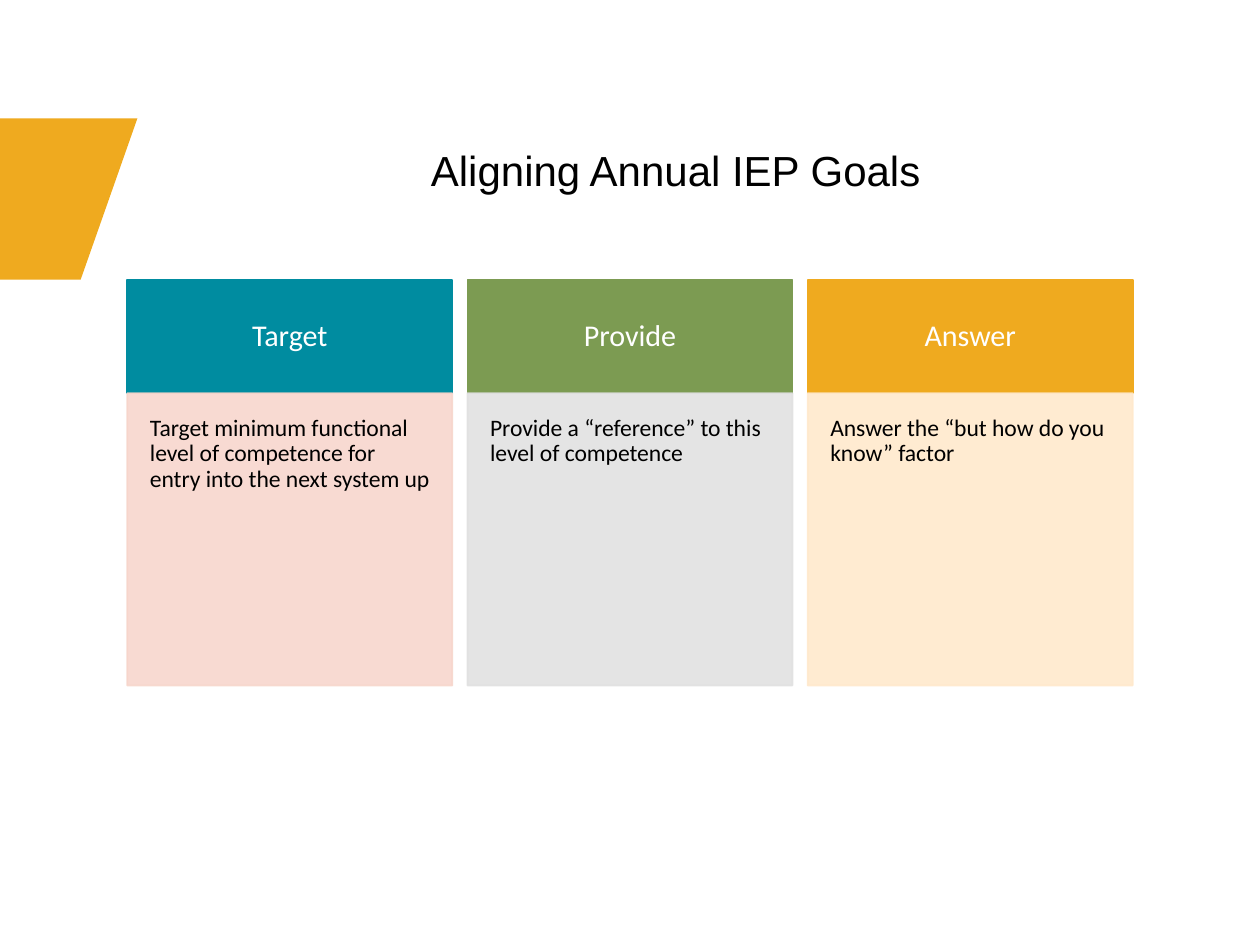
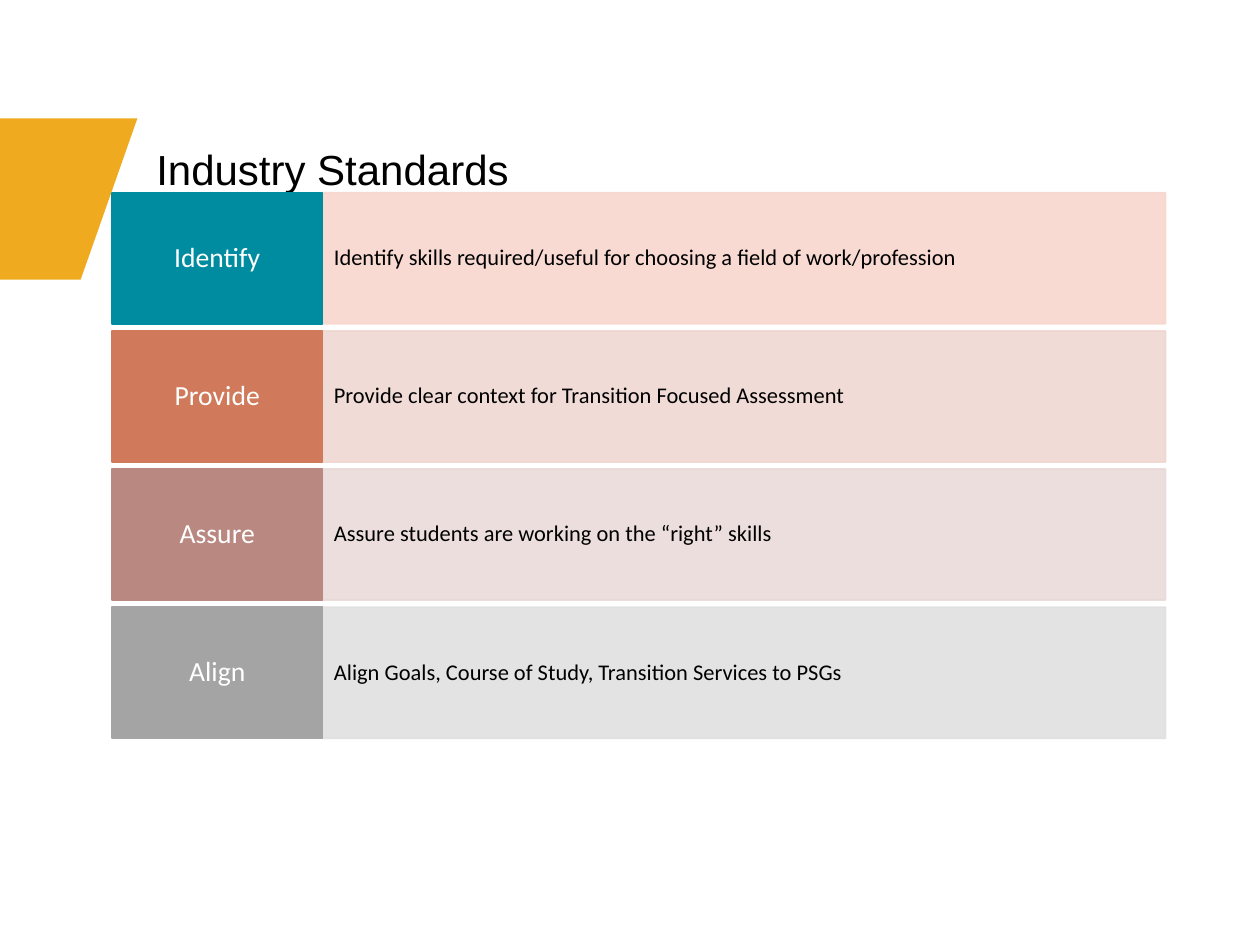
from lxml import etree
from pptx import Presentation
from pptx import util as u
from pptx.dml.color import RGBColor
from pptx.enum import text
from pptx.oxml.ns import qn

SLIDE_WIDTH, SLIDE_HEIGHT = 10, 7.5
TITLE_ONLY = 5
OPACITY = 86
COLOURS = {
    "ink": "000000", "white": "FFFFFF", "gold": "EFAA1F", "teal": "008CA0",
    "green": "7C9B52", "clay": "D07A5B", "rose": "B88881", "grey": "A4A4A4",
    "pale coral": "F7D5CB", "pale silver": "E0E0E0", "pale gold": "FFE8CA",
    "pale clay": "EFD6D1", "pale rose": "E8D9D7", "pale grey": "DFDFDF",
}
LEFT, CENTRE = text.PP_ALIGN.LEFT, text.PP_ALIGN.CENTER
TOP, MIDDLE = text.MSO_ANCHOR.TOP, text.MSO_ANCHOR.MIDDLE

TITLE = {"font": "Arial", "size": 24, "colour": "ink", "align": LEFT,
         "anchor": TOP, "spacing": 0.85, "insets": (0.07, 0.04)}
LABEL = {"font": "Calibri", "colour": "white", "align": CENTRE,
         "anchor": MIDDLE, "spacing": 0.9}
DETAIL = {"font": "Calibri", "colour": "ink", "align": LEFT, "spacing": 0.9}
COLUMN_HEAD = {**LABEL, "size": 17.2, "insets": (0.15, 0.15)}
COLUMN_BODY = {**DETAIL, "size": 13.5, "anchor": TOP, "insets": (0.18, 0.18)}
ROW_HEAD = {**LABEL, "size": 15.8, "insets": (0.06, 0.08)}
ROW_BODY = {**DETAIL, "size": 12.8, "anchor": MIDDLE, "insets": (0.09, 0.2)}

GOALS = [
    ("Target", "teal", "pale coral",
     "Target minimum functional level of competence for entry into the next system up"),
    ("Provide", "green", "pale silver",
     "Provide a “reference” to this level of competence"),
    ("Answer", "gold", "pale gold", "Answer the “but how do you know” factor"),
]
STANDARDS = [
    ("Identify", "teal", "pale coral",
     "Identify skills required/useful for choosing a field of work/profession"),
    ("Provide", "clay", "pale clay",
     "Provide clear context for Transition Focused Assessment"),
    ("Assure", "rose", "pale rose",
     "Assure students are working on the “right” skills"),
    ("Align", "grey", "pale grey",
     "Align Goals, Course of Study, Transition Services to PSGs"),
]


def rgb(name):
    """Return the named colour."""
    return RGBColor.from_string(COLOURS[name])


def track_starts(start, extent, size, count):
    """Return the starts of equal tracks spread evenly over an extent."""
    pitch = (extent - size) / (count - 1)
    return [start + index * pitch for index in range(count)]


def write(shape, wording, style):
    """Put one formatted paragraph into a shape."""
    frame = shape.text_frame
    frame.text = wording
    across, down = (u.Inches(inset) for inset in style["insets"])
    paragraph = frame.paragraphs[0]
    formats = {
        frame: {"word_wrap": True, "auto_size": text.MSO_AUTO_SIZE.NONE,
                "vertical_anchor": style["anchor"],
                "margin_left": across, "margin_right": across,
                "margin_top": down, "margin_bottom": down},
        paragraph: {"alignment": style["align"], "line_spacing": style["spacing"]},
        paragraph.runs[0].font: {"name": style["font"], "size": u.Pt(style["size"])},
    }
    for target, values in formats.items():
        for attribute, value in values.items():
            setattr(target, attribute, value)
    paragraph.runs[0].font.color.rgb = rgb(style["colour"])


def add_panel(slide, box, colour, wording, style, opacity=100):
    """Add a filled rectangle with its text."""
    shape = slide.shapes.add_shape(1, *(u.Inches(length) for length in box))
    shape.shadow.inherit = False
    shape.fill.solid()
    shape.fill.fore_color.rgb = rgb(colour)
    shape.line.color.rgb = rgb(colour)
    shape.line.width = u.Pt(1)
    if opacity < 100:
        for colour_element in shape.element.spPr.iter(qn("a:srgbClr")):
            alpha = etree.SubElement(colour_element, qn("a:alpha"))
            alpha.set("val", str(opacity * 1000))
    write(shape, wording, style)


def add_flag(slide):
    """Add the slanted gold flag at the left edge."""
    top, bottom = 0.94, 2.22
    corners = [(0, top), (1.09, top), (0.64, bottom), (0, bottom)]
    points = [(u.Inches(x), u.Inches(y)) for x, y in corners]
    builder = slide.shapes.build_freeform(*points[0])
    builder.add_line_segments(points[1:], close=True)
    flag = builder.convert_to_shape()
    flag.shadow.inherit = False
    flag.fill.solid()
    flag.fill.fore_color.rgb = rgb("gold")
    flag.line.fill.background()


def add_titled_slide(presentation, wording, box):
    """Add a slide with the flag and a title."""
    slide = presentation.slides.add_slide(presentation.slide_layouts[TITLE_ONLY])
    add_flag(slide)
    title = slide.shapes.title
    for side, length in zip(("left", "top", "width", "height"), box):
        setattr(title, side, u.Inches(length))
    write(title, wording, TITLE)
    return slide


def add_columns(slide, items):
    """Add columns, each with a heading above its detail."""
    top, width, head, body = 2.22, 2.58, 0.9, 2.32
    for left, (label, strong, pale, detail) in zip(
            track_starts(1.01, 7.98, width, len(items)), items):
        add_panel(slide, (left, top, width, head), strong, label, COLUMN_HEAD)
        add_panel(slide, (left, top + head, width, body), pale, detail,
                  COLUMN_BODY, OPACITY)


def add_rows(slide, items):
    """Add rows, each with a heading left of its detail."""
    left, height, head, body = 0.89, 1.04, 1.67, 6.69
    for top, (label, strong, pale, detail) in zip(
            track_starts(1.53, 4.33, height, len(items)), items):
        add_panel(slide, (left + head, top, body, height), pale, detail,
                  ROW_BODY, OPACITY)
        add_panel(slide, (left, top, head, height), strong, label, ROW_HEAD)


def main():
    """Build and save the presentation."""
    presentation = Presentation()
    presentation.slide_width = u.Inches(SLIDE_WIDTH)
    presentation.slide_height = u.Inches(SLIDE_HEIGHT)
    goals = add_titled_slide(presentation, "Aligning Annual IEP Goals",
                             (3.35, 1.17, 6.65, 0.62))
    add_columns(goals, GOALS)
    standards = add_titled_slide(presentation, "Industry Standards",
                                 (1.17, 1.16, 8.09, 0.61))
    add_rows(standards, STANDARDS)
    presentation.save("out.pptx")


if __name__ == "__main__":
    main()
